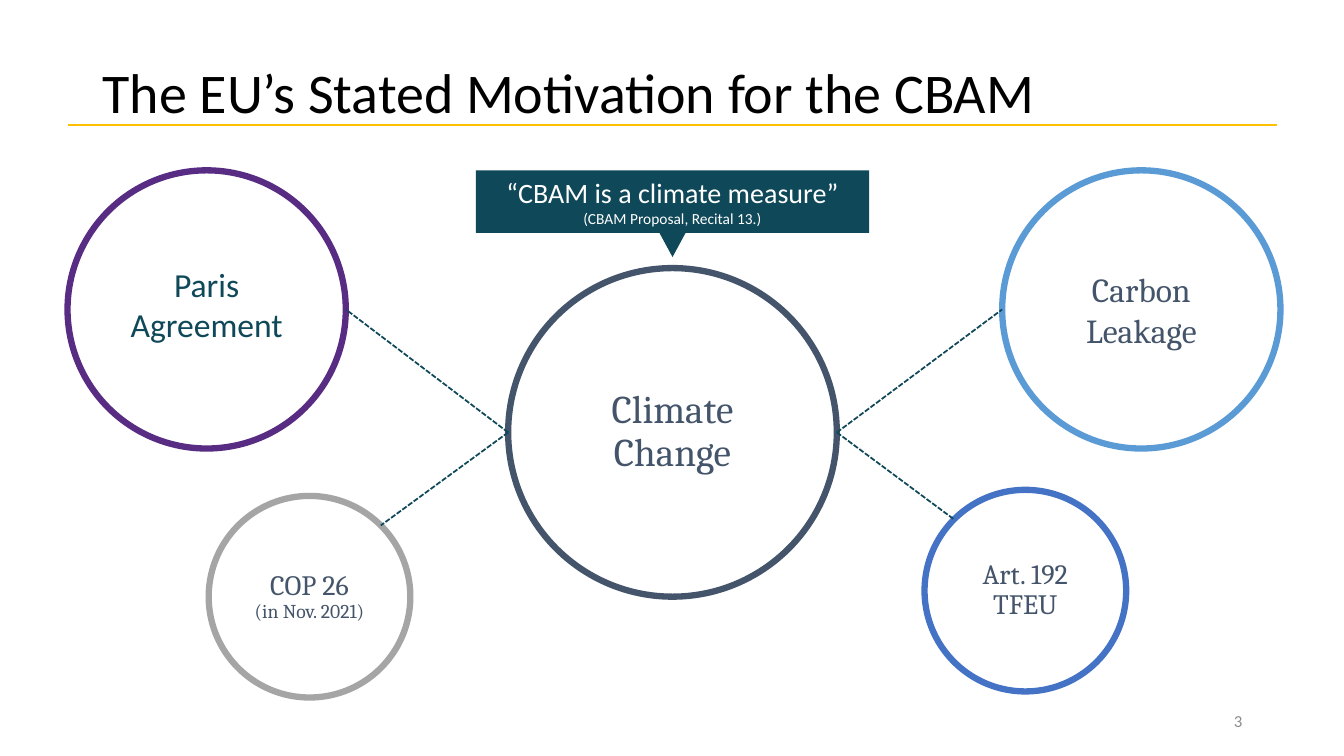
import math

import pptx
import pptx.dml.color
import pptx.enum.dml
import pptx.enum.shapes
import pptx.enum.text
import pptx.oxml
import pptx.util

Inches = pptx.util.Inches
Pt = pptx.util.Pt
RGBColor = pptx.dml.color.RGBColor
SHAPE = pptx.enum.shapes.MSO_SHAPE
ALIGN = pptx.enum.text.PP_ALIGN
ANCHOR = pptx.enum.text.MSO_ANCHOR

BLACK = RGBColor(0x00, 0x00, 0x00)
WHITE = RGBColor(0xFF, 0xFF, 0xFF)
TEAL = RGBColor(0x0F, 0x48, 0x59)
SLATE = RGBColor(0x44, 0x54, 0x6A)
GOLD = RGBColor(0xFF, 0xC0, 0x00)
PURPLE = RGBColor(0x58, 0x2C, 0x83)
LIGHT_BLUE = RGBColor(0x5B, 0x9B, 0xD5)
BLUE = RGBColor(0x44, 0x72, 0xC4)
GREY = RGBColor(0xA5, 0xA5, 0xA5)
NUMBER_GREY = RGBColor(0x8C, 0x8C, 0x8C)


def write(tf, lines, font, color, align=ALIGN.CENTER, spacing=1.0, anchor=ANCHOR.MIDDLE):
    """Fill a frame with one paragraph; lines are (text, size) pairs split by line breaks."""
    tf.word_wrap = True
    tf.vertical_anchor = anchor
    p = tf.paragraphs[0]
    p.alignment = align
    p.line_spacing = spacing
    for i, (text, size) in enumerate(lines):
        if i:
            p.add_line_break()
        r = p.add_run()
        r.text = text
        r.font.name = font
        r.font.size = Pt(size)
        r.font.color.rgb = color
    return p


def add_text(s, box, *args, **kwargs):
    sp = s.shapes.add_textbox(*map(Inches, box))
    return write(sp.text_frame, *args, **kwargs)


def add_line(s, start, end, color, width, dash=None):
    line = s.shapes.add_connector(
        pptx.enum.shapes.MSO_CONNECTOR.STRAIGHT, *map(Inches, (*start, *end)))
    line.line.color.rgb = color
    line.line.width = Pt(width)
    if dash:
        line.line.dash_style = dash
    line._element.spPr.append(pptx.oxml.parse_xml(
        '<a:effectLst xmlns:a="http://schemas.openxmlformats.org/drawingml/2006/main"/>'))


def add_solid(s, preset, box, color):
    sp = s.shapes.add_shape(preset, *map(Inches, box))
    sp.shadow.inherit = False
    sp.fill.solid()
    sp.fill.fore_color.rgb = color
    sp.line.fill.background()
    return sp


def add_circle(s, box, color, lines=(), spacing=0.9):
    left, top, size = box
    sp = s.shapes.add_shape(SHAPE.OVAL, *map(Inches, (left, top, size, size)))
    sp.shadow.inherit = False
    sp.fill.background()
    sp.line.color.rgb = color
    sp.line.width = Pt(4.5)
    tf = sp.text_frame
    tf.margin_left = tf.margin_right = tf.margin_top = tf.margin_bottom = Inches(0.08)
    return write(tf, lines, "Cambria", SLATE, spacing=spacing)


def rim(box, degrees):
    """Point on a circle, with angles running clockwise from its right side."""
    left, top, size = box
    radius = size / 2
    angle = math.radians(degrees)
    return (left + radius * (1 + math.cos(angle)), top + radius * (1 + math.sin(angle)))


def add_header(s, box):
    left, top, width, height = box
    add_line(s, (0.67, 1.24), (12.67, 1.24), GOLD, 1)
    add_text(s, (left, top, width, height), [("The EU’s Stated Motivation for the CBAM", 40)],
             "Calibri", BLACK, align=ALIGN.LEFT, spacing=0.9)


def add_callout(s, box):
    """Banner with a pointer hanging from the middle of its lower edge."""
    left, top, width, height = box
    banner = add_solid(s, SHAPE.RECTANGLE, box, TEAL)
    write(banner.text_frame,
          [("“CBAM is a climate measure”", 20), ("(CBAM Proposal, Recital 13.)", 11)],
          "Calibri", WHITE)
    pointer_width = 0.26
    pointer = add_solid(s, SHAPE.ISOSCELES_TRIANGLE,
                        (left + (width - pointer_width) / 2, top + height, pointer_width, 0.24),
                        TEAL)
    pointer.rotation = 180


def add_motivations(s, box):
    """Climate circle in the middle, tied to two circles on each side."""
    left, top, width, _ = box
    large, small = 2.76, 2.0
    climate = (left + 4.37, top + 0.97, 3.26)
    paris = (left, top, large)
    leakage = (left + width - large, top, large)
    cop = (left + 1.4, top + 3.23, small)
    article = (left + 8.5, top + 3.17, small)

    add_circle(s, climate, SLATE, [("Climate Change", 28)])
    add_circle(s, cop, GREY, [("COP 26", 20), ("(in Nov. 2021)", 14)])
    add_circle(s, article, BLUE, [("Art. 192 TFEU", 20)])
    p = add_circle(s, leakage, LIGHT_BLUE, [("Carbon Leakage", 24)], spacing=1.0)
    p.space_after = Pt(6)
    add_circle(s, paris, PURPLE)
    add_text(s, (left + 0.46, top + 0.88, 1.84, 0.91), [("Paris", 24), ("Agreement", 24)],
             "Calibri", TEAL, anchor=ANCHOR.TOP)

    for climate_side, circle, circle_side in (
            (180, paris, 0), (180, cop, -45), (0, leakage, 180), (0, article, -135)):
        add_line(s, rim(climate, climate_side), rim(circle, circle_side), TEAL, 1.25,
                 pptx.enum.dml.MSO_LINE.SQUARE_DOT)


def main():
    prs = pptx.Presentation()
    prs.slide_width = Inches(13.33)
    prs.slide_height = Inches(7.5)
    s = prs.slides.add_slide(prs.slide_layouts[6])
    add_header(s, (0.92, 0.22, 11.5, 1.45))
    add_motivations(s, (0.67, 1.69, 12.03, 5.23))
    add_callout(s, (4.72, 1.69, 3.9, 0.62))
    add_text(s, (9.42, 6.95, 3, 0.4), [("3", 12)], "Calibri", NUMBER_GREY, align=ALIGN.RIGHT)
    prs.save("out.pptx")


if __name__ == "__main__":
    main()
